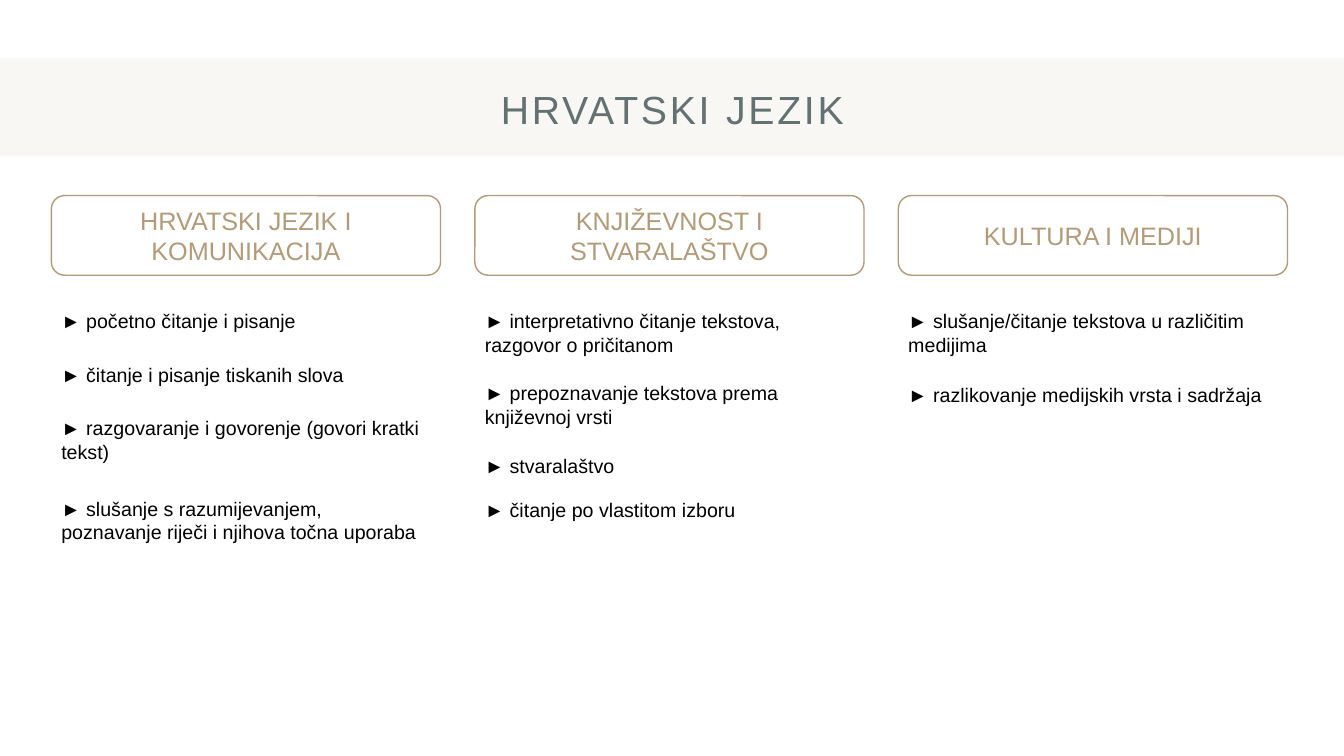
from lxml.etree import SubElement
from pptx import Presentation
from pptx.dml.color import RGBColor
from pptx.enum.shapes import MSO_SHAPE
from pptx.enum.text import MSO_ANCHOR, MSO_AUTO_SIZE, PP_ALIGN
from pptx.oxml.ns import qn
from pptx.util import Inches, Pt

COLORS = {"band": "D8CAB7", "title": "627272", "accent": "B59A76", "text": "000000"}
FONT = "Arial"
COLUMN_LEFT, COLUMN_STEP = 0.51, 4.2
HEADING_WIDTH, ITEM_WIDTH = 3.86, 3.83
LINE_HEIGHTS = {1: 0.34, 2: 0.57}

# Each item: top in inches, number of lines, text
COLUMNS = [
    ("HRVATSKI JEZIK I KOMUNIKACIJA", [
        (3.02, 1, "početno čitanje i pisanje"),
        (3.55, 1, "čitanje i pisanje tiskanih slova"),
        (4.08, 2, "razgovaranje i govorenje (govori kratki tekst)"),
        (4.88, 2, "slušanje s razumijevanjem, poznavanje riječi i njihova točna uporaba"),
    ]),
    ("KNJIŽEVNOST I STVARALAŠTVO", [
        (3.02, 2, "interpretativno čitanje tekstova, razgovor o pričitanom"),
        (3.73, 2, "prepoznavanje tekstova prema književnoj vrsti"),
        (4.45, 1, "stvaralaštvo"),
        (4.89, 1, "čitanje po vlastitom izboru"),
    ]),
    ("KULTURA I MEDIJI", [
        (3.02, 2, "slušanje/čitanje tekstova u različitim medijima"),
        (3.75, 1, "razlikovanje medijskih vrsta i sadržaja"),
    ]),
]


def rgb(name):
    return RGBColor.from_string(COLORS[name])


def write_text(frame, text, size, color, align=PP_ALIGN.LEFT,
               anchor=MSO_ANCHOR.TOP, spacing=None):
    """Fill a text frame with one formatted run; spacing is in points."""
    frame.word_wrap = True
    frame.vertical_anchor = anchor
    paragraph = frame.paragraphs[0]
    paragraph.alignment = align
    run = paragraph.add_run()
    run.text = text
    run.font.name = FONT
    run.font.size = Pt(size)
    run.font.color.rgb = rgb(color)
    if spacing:
        run.font._element.set("spc", str(spacing * 100))


class SlideBuilder:
    def __init__(self, presentation):
        self.slide = presentation.slides.add_slide(presentation.slide_layouts[5])

    def add_shape(self, kind, left, top, width, height):
        shape = self.slide.shapes.add_shape(
            kind, Inches(left), Inches(top), Inches(width), Inches(height))
        shape.shadow.inherit = False
        return shape

    def add_band(self, top, height, opacity):
        """Add a full-width translucent band behind the title."""
        band = self.add_shape(MSO_SHAPE.RECTANGLE, 0, top, 13.33, height)
        band.fill.solid()
        band.fill.fore_color.rgb = rgb("band")
        color = band._element.spPr.find(f".//{qn('a:srgbClr')}")
        SubElement(color, qn("a:alpha"), val=str(opacity * 1000))
        band.line.fill.background()
        self.slide.shapes.title._element.addprevious(band._element)

    def add_title(self, text):
        title = self.slide.shapes.title
        title.left, title.top = Inches(0.92), Inches(0.68)
        title.width, title.height = Inches(11.5), Inches(0.79)
        write_text(title.text_frame, text, size=28, color="title", spacing=2,
                   align=PP_ALIGN.CENTER, anchor=MSO_ANCHOR.MIDDLE)

    def add_heading(self, text, left):
        box = self.add_shape(MSO_SHAPE.ROUNDED_RECTANGLE, left, 1.94, HEADING_WIDTH, 0.79)
        box.fill.background()
        box.line.color.rgb = rgb("accent")
        box.line.width = Pt(1)
        write_text(box.text_frame, text, size=18, color="accent",
                   align=PP_ALIGN.CENTER, anchor=MSO_ANCHOR.MIDDLE)

    def add_item(self, text, left, top, lines):
        box = self.slide.shapes.add_textbox(
            Inches(left), Inches(top), Inches(ITEM_WIDTH), Inches(LINE_HEIGHTS[lines]))
        box.text_frame.auto_size = MSO_AUTO_SIZE.SHAPE_TO_FIT_TEXT
        write_text(box.text_frame, f"► {text}", size=14, color="text")


def main():
    presentation = Presentation()
    presentation.slide_width = Inches(13.33)
    presentation.slide_height = Inches(7.5)
    builder = SlideBuilder(presentation)
    builder.add_band(top=0.58, height=0.97, opacity=15)
    builder.add_title("HRVATSKI JEZIK")
    for index, (heading, items) in enumerate(COLUMNS):
        left = COLUMN_LEFT + index * COLUMN_STEP
        builder.add_heading(heading, left)
        for top, lines, text in items:
            builder.add_item(text, left, top, lines)
    presentation.save("out.pptx")


if __name__ == "__main__":
    main()
